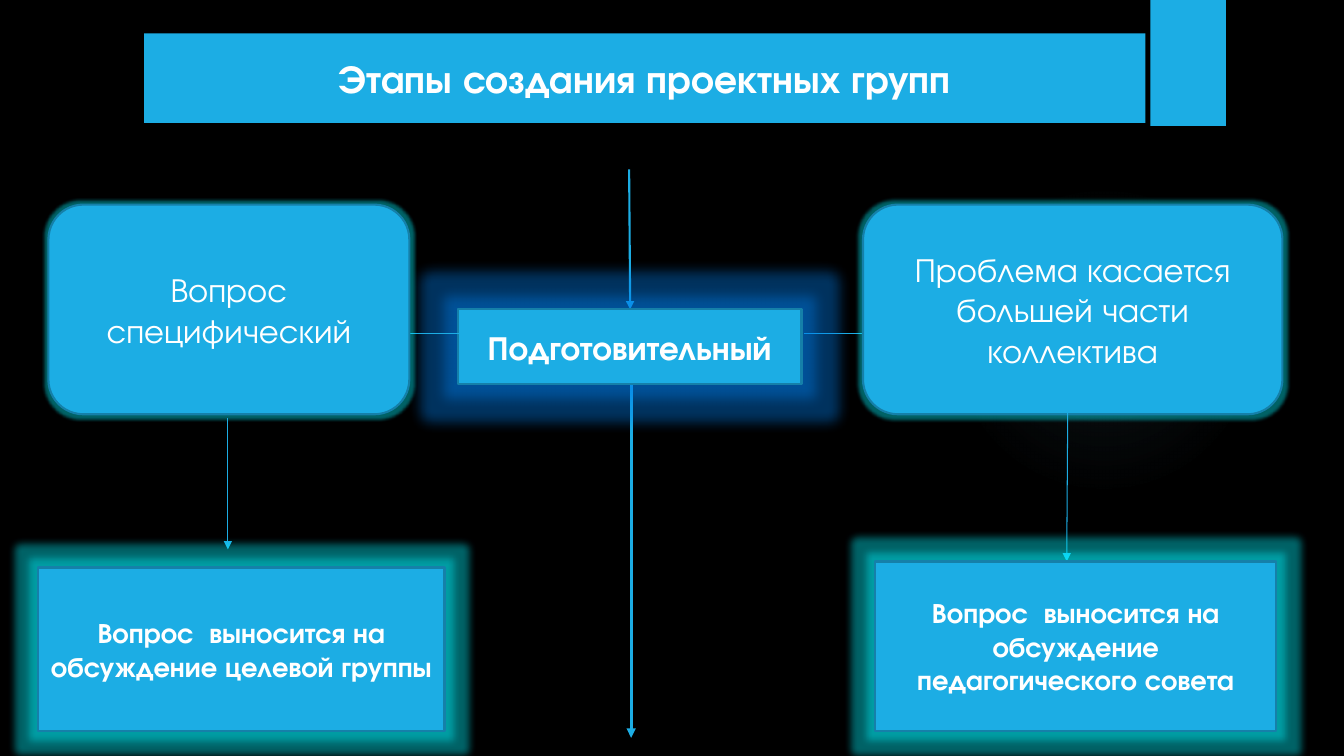
from pptx import Presentation
from pptx.dml.color import RGBColor
from pptx.enum.shapes import MSO_CONNECTOR as LINE, MSO_SHAPE as SHAPE
from pptx.enum.text import MSO_ANCHOR, PP_ALIGN
from pptx.oxml import parse_xml
from pptx.oxml.ns import nsdecls, qn
from pptx.util import Inches, Pt
from lxml import etree

FONT = "TeX Gyre Adventor"
COLORS = {
    "background": "000000",
    "accent": "1CADE4",
    "border": "1580A9",
    "text": "FFFFFF",
    "blue glow": "007FED",
    "teal glow": "00F5FF",
    "halo": "70A1C0",
}


def rgb(name):
    return RGBColor.from_string(COLORS[name])


def add_panel(slide, kind, left, top, width, height):
    panel = slide.shapes.add_shape(
        kind, Inches(left), Inches(top), Inches(width), Inches(height))
    panel.shadow.inherit = False
    panel.fill.solid()
    panel.fill.fore_color.rgb = rgb("accent")
    panel.line.fill.background()
    return panel


def add_halo(slide, left, top, size):
    """Faint round light that fades out towards its edge."""
    halo = add_panel(slide, SHAPE.OVAL, left, top, size, size)
    stops = "".join(
        f'<a:gs pos="{pos * 1000}"><a:srgbClr val="{COLORS["halo"]}">'
        f'<a:alpha val="{alpha * 1000}"/></a:srgbClr></a:gs>'
        for pos, alpha in ((0, 7), (36, 6), (69, 0), (100, 0)))
    gradient = parse_xml(
        f'<a:gradFill {nsdecls("a")}><a:gsLst>{stops}</a:gsLst>'
        '<a:path path="circle"><a:fillToRect l="50000" t="50000" '
        'r="50000" b="50000"/></a:path></a:gradFill>')
    properties = halo.fill._xPr
    properties.replace(properties.find(qn("a:solidFill")), gradient)


def add_glow(panel, color, radius):
    effects = panel._element.spPr.find(qn("a:effectLst"))
    glow = etree.SubElement(effects, qn("a:glow"), rad=str(Pt(radius)))
    tint = etree.SubElement(glow, qn("a:srgbClr"), val=COLORS[color])
    etree.SubElement(tint, qn("a:alpha"), val="40000")


def add_box(slide, kind, place, text, size, bold=True, glow=None):
    box = add_panel(slide, kind, *place)
    if glow:
        box.line.color.rgb = rgb("border")
        box.line.width = Pt(1.5)
        add_glow(box, *glow)
    frame = box.text_frame
    frame.word_wrap = True
    frame.vertical_anchor = MSO_ANCHOR.MIDDLE
    frame.text = text
    paragraph = frame.paragraphs[0]
    paragraph.alignment = PP_ALIGN.CENTER
    font = paragraph.runs[0].font
    font.name = FONT
    font.size = Pt(size)
    font.bold = bold
    font.color.rgb = rgb("text")


def add_arrow(slide, start, end, width=0.75):
    arrow = slide.shapes.add_connector(
        LINE.STRAIGHT, *(Inches(value) for value in (*start, *end)))
    arrow.line.color.rgb = rgb("accent")
    arrow.line.width = Pt(width)
    etree.SubElement(arrow.line._ln, qn("a:tailEnd"), type="triangle")
    etree.SubElement(arrow._element.spPr, qn("a:effectLst"))


def main():
    deck = Presentation()
    deck.slide_width, deck.slide_height = Inches(13.33), Inches(7.5)
    slide = deck.slides.add_slide(deck.slide_layouts[6])
    slide.background.fill.solid()
    slide.background.fill.fore_color.rgb = rgb("background")

    # Backdrop
    add_halo(slide, 9.41, 1.83, 3.08)
    add_panel(slide, SHAPE.RECTANGLE, 11.41, 0, 0.75, 1.25)

    # Arrows that run behind the boxes
    add_arrow(slide, (6.26, 3.57), (6.26, 7.32), 2.25)
    add_arrow(slide, (7.97, 3.31), (8.74, 3.31))
    add_arrow(slide, (6.24, 1.68), (6.25, 3.07), 1.5)

    # Title and stage
    add_box(slide, SHAPE.RECTANGLE, (1.43, 0.33, 9.93, 0.89),
            "Этапы создания проектных групп", 28)
    add_box(slide, SHAPE.RECTANGLE, (4.54, 3.07, 3.41, 0.74),
            "Подготовительный", 24, glow=("blue glow", 18))
    add_arrow(slide, (4.56, 3.31), (3.68, 3.31))

    # Kinds of question
    for place, question in (
            ((0.48, 2.03, 3.58, 2.08), "Вопрос специфический"),
            ((8.56, 2.03, 4.16, 2.08),
             "Проблема касается большей части коллектива")):
        add_box(slide, SHAPE.ROUNDED_RECTANGLE, place, question, 24,
                bold=False, glow=("teal glow", 5))

    # Where each question is discussed
    for start, end, place, outcome in (
            ((10.59, 4.1), (10.58, 5.57), (8.68, 5.57, 3.98, 1.68),
             "Вопрос  выносится на обсуждение педагогического совета"),
            ((2.26, 4.15), (2.26, 5.45), (0.38, 5.63, 4.03, 1.62),
             "Вопрос  выносится на обсуждение целевой группы")):
        add_arrow(slide, start, end)
        add_box(slide, SHAPE.RECTANGLE, place, outcome, 20,
                glow=("teal glow", 11))

    deck.save("out.pptx")


if __name__ == "__main__":
    main()
